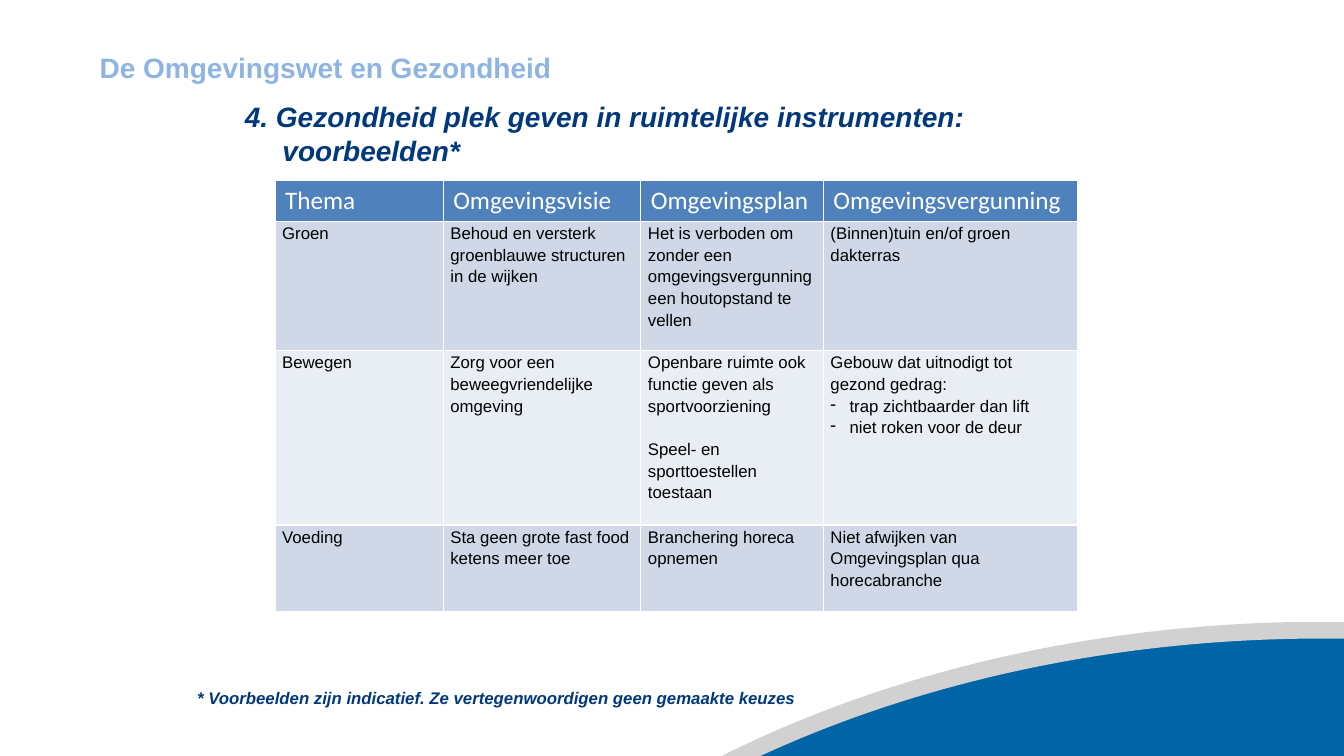
"""Build the slide on giving health a place in spatial planning instruments."""
from lxml import etree
from pptx import Presentation
from pptx.dml.color import RGBColor
from pptx.enum.shapes import MSO_SHAPE
from pptx.oxml.ns import qn
from pptx.util import Cm, Pt

OVAL = MSO_SHAPE.OVAL

THEME = {
    "sans": "Arial", "header_font": "Calibri",
    "heading_size": 20, "header_size": 18, "body_size": 12,
    "navy": "00387B", "light_blue": "8EB4E3", "wave": "0065A7", "wave_edge": "D1D1D1",
    "header_fill": "4F81BD", "bands": ("D0D8E8", "E9EDF4"),
    "white": "FFFFFF", "black": "000000",
}

HEADINGS = [
    ("De Omgevingswet en Gezondheid", (2.26, 1.27, 28.5, 0.84), "heading_size", "light_blue", False),
    ("4. Gezondheid plek geven in ruimtelijke instrumenten: voorbeelden*",
     (5.92, 2.51, 21.39, 1.47), "heading_size", "navy", True),
    ("* Voorbeelden zijn indicatief. Ze vertegenwoordigen geen gemaakte keuzes",
     (4.72, 17.32, 21.39, 0.86), "body_size", "navy", True),
]

HEADER = ["Thema", "Omgevingsvisie", "Omgevingsplan", "Omgevingsvergunning"]
ROWS = [
    [["Groen"],
     ["Behoud en versterk groenblauwe structuren in de wijken"],
     ["Het is verboden om zonder een omgevingsvergunning een houtopstand te vellen"],
     ["(Binnen)tuin en/of groen dakterras"]],
    [["Bewegen"],
     ["Zorg voor een beweegvriendelijke omgeving"],
     ["Openbare ruimte ook functie geven als sportvoorziening",
      ("gap", "Speel- en sporttoestellen toestaan")],
     ["Gebouw dat uitnodigt tot gezond gedrag:",
      ("bullet", "trap zichtbaarder dan lift"),
      ("bullet", "niet roken voor de deur")]],
    [["Voeding"],
     ["Sta geen grote fast food ketens meer toe"],
     ["Branchering horeca opnemen"],
     ["Niet afwijken van Omgevingsplan qua horecabranche"]],
]
TABLE_ORIGIN = (6.93, 4.55)
COLUMN_WIDTHS = (4.24, 4.98, 4.6, 6.4)
ROW_HEIGHTS = (1.02, 3.26, 4.39, 2.17)
WAVE_BOX = (7.9, 15.88, 50.8, 34.72)


def color(name):
    return RGBColor.from_string(THEME.get(name, name))


def add_run(paragraph, text, font, size, ink, bold=False, italic=False):
    run = paragraph.add_run()
    run.text = text
    run.font.name = THEME[font]
    run.font.size = Pt(THEME[size])
    run.font.color.rgb = color(ink)
    run.font.bold = bold
    run.font.italic = italic


def set_indent(paragraph, indent):
    properties = paragraph._p.get_or_add_pPr()
    properties.set("marL", str(Cm(indent)))
    properties.set("indent", str(-Cm(indent)))
    return properties


def add_wave(slide):
    wave = slide.shapes.add_shape(OVAL, *map(Cm, WAVE_BOX))
    wave.shadow.inherit = False
    wave.fill.solid()
    wave.fill.fore_color.rgb = color("wave")
    wave.line.color.rgb = color("wave_edge")
    wave.line.width = Pt(12)


def add_heading(slide, text, box, size, ink, italic):
    frame = slide.shapes.add_textbox(*map(Cm, box)).text_frame
    frame.word_wrap = True
    frame.margin_top = frame.margin_bottom = 0
    paragraph = frame.paragraphs[0]
    set_indent(paragraph, 0.95)
    add_run(paragraph, text, "sans", size, ink, True, italic)


def style_cell(cell, fill):
    cell.fill.solid()
    cell.fill.fore_color.rgb = color(fill)
    properties = cell._tc.get_or_add_tcPr()
    for index, side in enumerate(("lnL", "lnR", "lnT", "lnB")):
        border = etree.Element(qn(f"a:{side}"), w=str(Pt(1)))
        border_fill = etree.SubElement(border, qn("a:solidFill"))
        etree.SubElement(border_fill, qn("a:srgbClr"), val=THEME["white"])
        properties.insert(index, border)


def fill_body_cell(cell, entries):
    cell.margin_left = cell.margin_right = Cm(0.18)
    cell.margin_top = cell.margin_bottom = 0
    frame = cell.text_frame
    for index, entry in enumerate(entries):
        kind, text = ("plain", entry) if isinstance(entry, str) else entry
        paragraph = frame.add_paragraph() if index else frame.paragraphs[0]
        paragraph.line_spacing = 1.15
        if kind == "gap":
            paragraph.space_before = Pt(15.5)
        if kind == "bullet":
            properties = set_indent(paragraph, 0.48)
            etree.SubElement(properties, qn("a:buChar"), char="-")
        add_run(paragraph, text, "sans", "body_size", "black")


def add_instrument_table(slide):
    table = slide.shapes.add_table(
        len(ROW_HEIGHTS), len(COLUMN_WIDTHS), *map(Cm, TABLE_ORIGIN),
        Cm(sum(COLUMN_WIDTHS)), Cm(sum(ROW_HEIGHTS))).table
    for column, width in zip(table.columns, COLUMN_WIDTHS):
        column.width = Cm(width)
    for row, height in zip(table.rows, ROW_HEIGHTS):
        row.height = Cm(height)
    for cell, text in zip(table.rows[0].cells, HEADER):
        style_cell(cell, "header_fill")
        add_run(cell.text_frame.paragraphs[0], text, "header_font", "header_size", "white")
    for row_index, row in enumerate(ROWS):
        for cell, entries in zip(table.rows[row_index + 1].cells, row):
            style_cell(cell, THEME["bands"][row_index % 2])
            fill_body_cell(cell, entries)


def main():
    presentation = Presentation()
    presentation.slide_width = Cm(33.87)
    presentation.slide_height = Cm(19.05)
    slide = presentation.slides.add_slide(presentation.slide_layouts[6])
    add_wave(slide)
    add_instrument_table(slide)
    for heading in HEADINGS:
        add_heading(slide, *heading)
    presentation.save("out.pptx")


if __name__ == "__main__":
    main()
